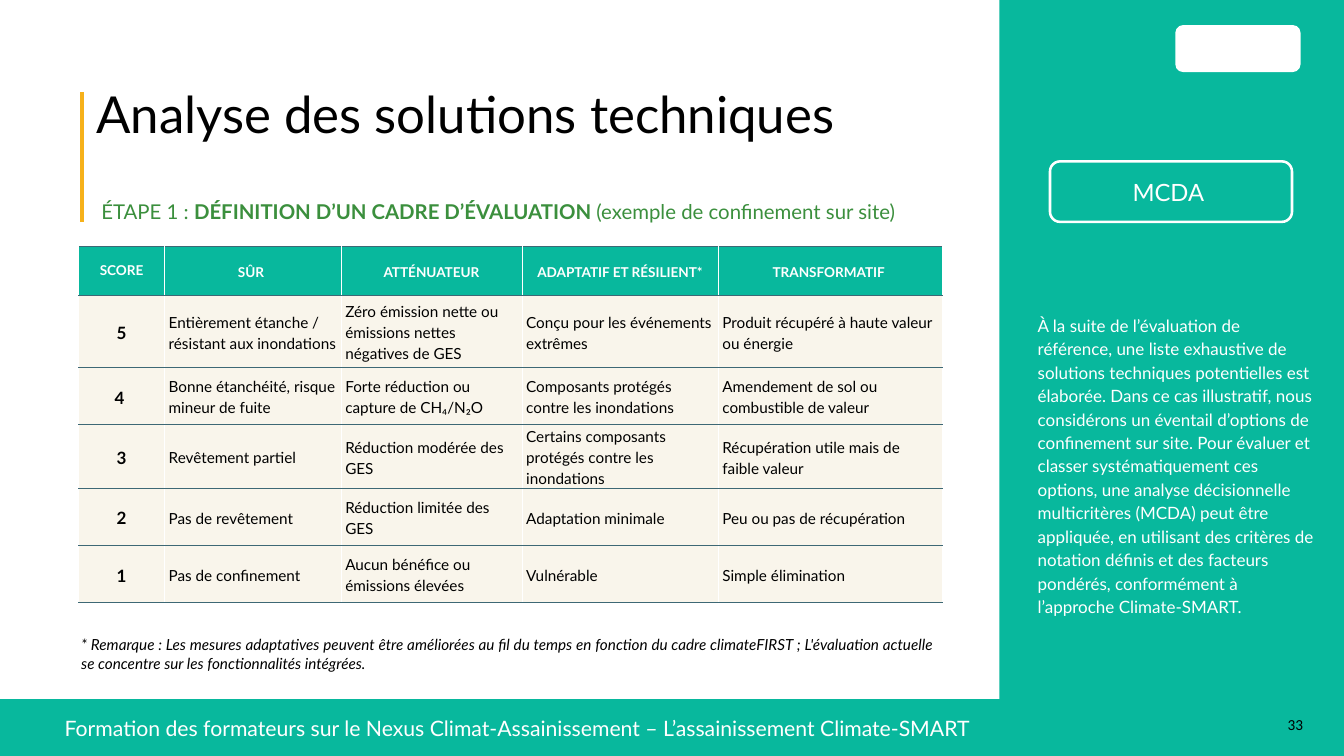
import dataclasses
import typing

import pptx
import pptx.dml.color
import pptx.enum.shapes
import pptx.enum.text
import pptx.oxml
import pptx.oxml.ns
import pptx.util

EMU_PER_PX = 9144
ALIGN = pptx.enum.text.PP_ALIGN
MIDDLE = pptx.enum.text.MSO_ANCHOR.MIDDLE
SHAPE = pptx.enum.shapes.MSO_SHAPE


@dataclasses.dataclass(frozen=True)
class Theme:
    font: str = "Lato"
    number_font: str = "Calibri"
    teal: str = "08B89D"
    cream: str = "F9F5EB"
    amber: str = "F6B11A"
    green: str = "3B8F3D"
    rule: str = "3D6875"
    white: str = "FFFFFF"
    black: str = "000000"
    title: int = 60
    badge: int = 28
    footer: int = 25
    step: int = 24
    body: int = 20
    cell: int = 18
    header: int = 16


THEME = Theme()


@dataclasses.dataclass(frozen=True)
class Box:
    left: int
    top: int
    width: int
    height: int

    def emu(self) -> tuple[int, ...]:
        return tuple(value * EMU_PER_PX for value in dataclasses.astuple(self))


@dataclasses.dataclass(frozen=True)
class Style:
    size: int
    color: str
    align: typing.Any = ALIGN.LEFT
    bold: bool = False
    italic: bool = False
    font: str = THEME.font
    line_spacing: float = 1.0
    before: int = 0
    after: int = 0


@dataclasses.dataclass(frozen=True)
class Label:
    box: Box
    text: str
    style: Style


@dataclasses.dataclass(frozen=True)
class Panel:
    kind: typing.Any
    box: Box
    fill: str


PANELS = [
    Panel(SHAPE.RECTANGLE, Box(1635, 0, 564, 1237), THEME.teal),
    Panel(SHAPE.ROUNDED_RECTANGLE, Box(1923, 41, 205, 77), THEME.white),
    Panel(SHAPE.RECTANGLE, Box(0, 1144, 2199, 93), THEME.teal),
]
BADGE = Panel(SHAPE.ROUNDED_RECTANGLE, Box(1718, 264, 396, 99), THEME.teal)
BADGE_STYLE = Style(THEME.badge, THEME.white, ALIGN.CENTER)

LABELS = [
    Label(Box(148, 131, 1375, 111), "Analyse des solutions techniques", Style(THEME.title, THEME.black)),
    Label(
        Box(1688, 506, 479, 510),
        "À la suite de l’évaluation de référence, une liste exhaustive de solutions techniques "
        "potentielles est élaborée. Dans ce cas illustratif, nous considérons un éventail d’options "
        "de confinement sur site. Pour évaluer et classer systématiquement ces options, une analyse "
        "décisionnelle multicritères (MCDA) peut être appliquée, en utilisant des critères de "
        "notation définis et des facteurs pondérés, conformément à l’approche Climate-SMART.",
        Style(THEME.body, THEME.white, line_spacing=1.15, after=6),
    ),
    Label(
        Box(123, 1035, 1414, 101),
        "* Remarque : Les mesures adaptatives peuvent être améliorées au fil du temps en fonction "
        "du cadre climateFIRST ; L'évaluation actuelle se concentre sur les fonctionnalités intégrées.",
        Style(THEME.cell, THEME.black, ALIGN.JUSTIFY, italic=True),
    ),
    Label(
        Box(96, 1166, 1867, 52),
        "Formation des formateurs sur le Nexus Climat-Assainissement – L’assainissement Climate-SMART",
        Style(THEME.footer, THEME.white),
    ),
    Label(Box(1636, 1165, 506, 30), "33", Style(THEME.cell, THEME.black, ALIGN.RIGHT, font=THEME.number_font)),
]

STEP_BOX = Box(156, 315, 1387, 52)
STEP_STYLE = Style(THEME.step, THEME.green, ALIGN.JUSTIFY, line_spacing=1.15, after=6)
STEP_RUNS = [
    ("ÉTAPE 1 : ", False),
    ("DÉFINITION D’UN CADRE D’ÉVALUATION ", True),
    ("(exemple de confinement sur site)", False),
]

TABLE_BOX = Box(129, 403, 1413, 574)
COLUMN_WIDTHS = [140, 289, 296, 321, 367]
ROW_HEIGHTS = [80, 118, 94, 94, 94, 94]
ROWS = [
    ["SCORE", "SÛR ", "ATTÉNUATEUR", "ADAPTATIF ET RÉSILIENT*", "TRANSFORMATIF "],
    ["5", "Entièrement étanche / résistant aux inondations",
     "Zéro émission nette ou émissions nettes négatives de GES",
     "Conçu pour les événements extrêmes", "Produit récupéré à haute valeur ou énergie"],
    ["4 ", "Bonne étanchéité, risque mineur de fuite", "Forte réduction ou capture de CH₄/N₂O",
     "Composants protégés contre les inondations", "Amendement de sol ou combustible de valeur"],
    ["3", "Revêtement partiel", "Réduction modérée des GES",
     "Certains composants protégés contre les inondations", "Récupération utile mais de faible valeur"],
    ["2", "Pas de revêtement", "Réduction limitée des GES", "Adaptation minimale", "Peu ou pas de récupération"],
    ["1", "Pas de confinement", "Aucun bénéfice ou émissions élevées", "Vulnérable", "Simple élimination"],
]
CORNER_STYLE = Style(THEME.header, THEME.white, ALIGN.CENTER, bold=True)
HEADER_STYLE = dataclasses.replace(CORNER_STYLE, line_spacing=1.15, before=3, after=3)
SCORE_STYLE = dataclasses.replace(HEADER_STYLE, size=THEME.body, color=THEME.black)
CRITERION_STYLE = Style(THEME.cell, THEME.black, line_spacing=1.15, after=6)


def rgb(color: str) -> pptx.dml.color.RGBColor:
    return pptx.dml.color.RGBColor.from_string(color)


def format_paragraph(paragraph, style: Style) -> None:
    paragraph.alignment = style.align
    paragraph.line_spacing = style.line_spacing
    paragraph.space_before = pptx.util.Pt(style.before)
    paragraph.space_after = pptx.util.Pt(style.after)
    for run in paragraph.runs:
        run.font.name = style.font
        run.font.size = pptx.util.Pt(style.size)
        run.font.bold = style.bold
        run.font.italic = style.italic
        run.font.color.rgb = rgb(style.color)


def draw_panel(slide, panel: Panel):
    shape = slide.shapes.add_shape(panel.kind, *panel.box.emu())
    shape.shadow.inherit = False
    shape.fill.solid()
    shape.fill.fore_color.rgb = rgb(panel.fill)
    shape.line.fill.background()
    return shape


def draw_label(slide, label: Label):
    shape = slide.shapes.add_textbox(*label.box.emu())
    shape.text_frame.word_wrap = True
    shape.text_frame.text = label.text
    format_paragraph(shape.text_frame.paragraphs[0], label.style)
    return shape


def draw_step(slide) -> None:
    paragraph = draw_label(slide, Label(STEP_BOX, "", STEP_STYLE)).text_frame.paragraphs[0]
    for text, bold in STEP_RUNS:
        paragraph.add_run().text = text
    format_paragraph(paragraph, STEP_STYLE)
    for run, (text, bold) in zip(paragraph.runs, STEP_RUNS):
        run.font.bold = bold


def draw_badge(slide) -> None:
    shape = draw_panel(slide, BADGE)
    shape.line.color.rgb = rgb(THEME.white)
    shape.line.width = pptx.util.Pt(3)
    shape.text_frame.text = "MCDA "
    shape.text_frame.vertical_anchor = MIDDLE
    format_paragraph(shape.text_frame.paragraphs[0], BADGE_STYLE)


def draw_title_bar(slide) -> None:
    ends = (value * EMU_PER_PX for value in (134, 151, 134, 363))
    bar = slide.shapes.add_connector(pptx.enum.shapes.MSO_CONNECTOR.STRAIGHT, *ends)
    bar.line.color.rgb = rgb(THEME.amber)
    bar.line.width = pptx.util.Pt(4.95)
    bar._element.spPr.append(pptx.oxml.parse_xml(f"<a:effectLst {pptx.oxml.ns.nsdecls('a')}/>"))


def add_rules(cell) -> None:
    for position, side in enumerate(("lnT", "lnB")):
        cell._tc.get_or_add_tcPr().insert(position, pptx.oxml.parse_xml(
            f"<a:{side} {pptx.oxml.ns.nsdecls('a')} w='12700'><a:solidFill>"
            f"<a:srgbClr val='{THEME.rule}'/></a:solidFill></a:{side}>"))


def cell_style(row: int, column: int) -> Style:
    if row == 0:
        return HEADER_STYLE if column else CORNER_STYLE
    return CRITERION_STYLE if column else SCORE_STYLE


def draw_table(slide) -> None:
    table = slide.shapes.add_table(len(ROWS), len(COLUMN_WIDTHS), *TABLE_BOX.emu()).table
    table.first_row = table.horz_banding = False
    for column, width in zip(table.columns, COLUMN_WIDTHS):
        column.width = width * EMU_PER_PX
    for row, height in zip(table.rows, ROW_HEIGHTS):
        row.height = height * EMU_PER_PX
    for row, texts in enumerate(ROWS):
        for column, text in enumerate(texts):
            cell = table.cell(row, column)
            cell.text_frame.text = text
            cell.vertical_anchor = MIDDLE
            if row or column:
                cell.margin_left = cell.margin_right = 7 * EMU_PER_PX
                cell.margin_top = cell.margin_bottom = 0
            cell.fill.solid()
            cell.fill.fore_color.rgb = rgb(THEME.cream if row else THEME.teal)
            add_rules(cell)
            format_paragraph(cell.text_frame.paragraphs[0], cell_style(row, column))


def main() -> None:
    presentation = pptx.Presentation()
    presentation.slide_width = 2199 * EMU_PER_PX
    presentation.slide_height = 1237 * EMU_PER_PX
    slide = presentation.slides.add_slide(presentation.slide_layouts[6])
    for panel in PANELS:
        draw_panel(slide, panel)
    draw_title_bar(slide)
    draw_step(slide)
    draw_table(slide)
    draw_badge(slide)
    for label in LABELS:
        draw_label(slide, label)
    presentation.save("out.pptx")


if __name__ == "__main__":
    main()
